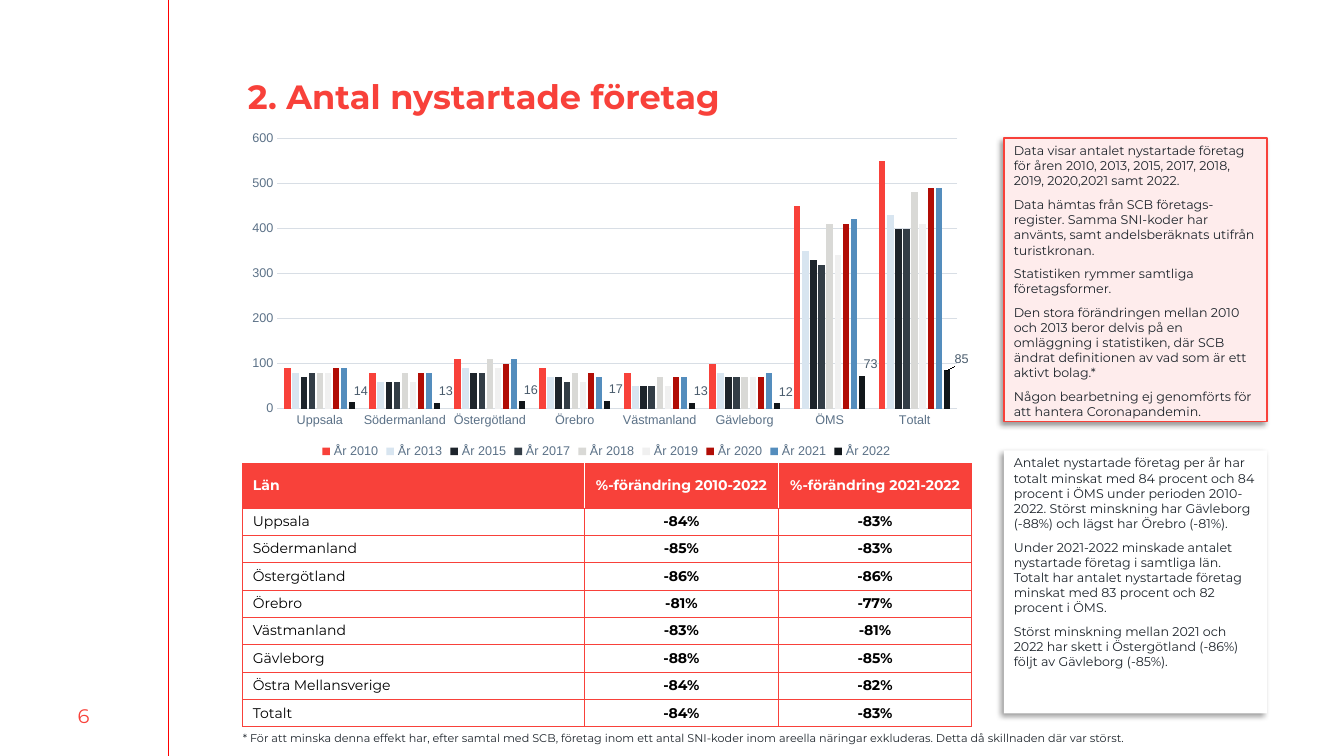
from lxml.etree import SubElement as Sub
from pptx import Presentation
from pptx.chart.data import CategoryChartData as Data
from pptx.dml.color import RGBColor as RGB
from pptx.enum.chart import XL_CHART_TYPE as Kind, XL_LABEL_POSITION as Spot
from pptx.enum.chart import XL_LEGEND_POSITION as Side, XL_TICK_MARK as Tick
from pptx.enum.shapes import MSO_CONNECTOR as Conn, MSO_SHAPE as Shape
from pptx.enum.text import MSO_ANCHOR as Anchor, PP_ALIGN as Align
from pptx.oxml import parse_xml
from pptx.oxml.ns import nsdecls, qn
from pptx.util import Cm, Pt

HUES = {
    "red": "F8413A", "rule": "FF0000", "pink": "FEECEC", "white": "FFFFFF",
    "black": "000000", "ink": "1D242B", "axis": "5B7187", "grid": "D8DEE5",
    "label": "495B6C",
}
FONT = "Montserrat"
LEFT = 6.12

AREAS = ["Uppsala", "Södermanland", "Östergötland", "Örebro", "Västmanland",
         "Gävleborg", "ÖMS", "Totalt"]
YEARS = [
    ("År 2010", "F8413A", (90, 80, 110, 90, 80, 100, 450, 550)),
    ("År 2013", "D8E5F0", (80, 60, 90, 70, 50, 80, 350, 430)),
    ("År 2015", "1D242B", (70, 60, 80, 70, 50, 70, 330, 400)),
    ("År 2017", "333D46", (80, 60, 80, 60, 50, 70, 320, 400)),
    ("År 2018", "D9D9D6", (80, 80, 110, 80, 70, 70, 410, 480)),
    ("År 2019", "F0F0F0", (80, 60, 90, 60, 50, 70, 340, 410)),
    ("År 2020", "B10D06", (90, 80, 100, 80, 70, 70, 410, 490)),
    ("År 2021", "548DBD", (90, 80, 110, 70, 70, 80, 420, 490)),
    ("År 2022", "11161A", (14, 13, 16, 17, 13, 12, 73, 85)),
]
ROWS = [
    ("Län", "%-förändring 2010-2022", "%-förändring 2021-2022"),
    ("Uppsala", "-84%", "-83%"),
    ("Södermanland", "-85%", "-83%"),
    ("Östergötland", "-86%", "-86%"),
    ("Örebro", "-81%", "-77%"),
    ("Västmanland", "-83%", "-81%"),
    ("Gävleborg", "-88%", "-85%"),
    ("Östra Mellansverige", "-84%", "-82%"),
    ("Totalt", "-84%", "-83%"),
]
FACTS = [
    "Data visar antalet nystartade företag för åren 2010, 2013, 2015, 2017, "
    "2018, 2019, 2020,2021 samt 2022.",
    "Data hämtas från SCB företags-register. Samma SNI-koder har använts, "
    "samt andelsberäknats utifrån turistkronan.",
    "Statistiken rymmer samtliga företagsformer.",
    "Den stora förändringen mellan 2010 och 2013 beror delvis på en "
    "omläggning i statistiken, där SCB ändrat definitionen av vad som är ett "
    "aktivt bolag.*",
    "Någon bearbetning ej genomförts för att hantera Coronapandemin.",
]
TRENDS = [
    "Antalet nystartade företag per år har totalt minskat med 84 procent och "
    "84 procent i ÖMS under perioden 2010-2022. Störst minskning har "
    "Gävleborg (-88%) och lägst har Örebro (-81%).",
    "Under 2021-2022 minskade antalet nystartade företag i samtliga län. "
    "Totalt har antalet nystartade företag minskat med 83 procent och 82 "
    "procent i ÖMS.",
    "Störst minskning mellan 2021 och 2022 har skett i Östergötland (-86%) "
    "följt av Gävleborg (-85%).",
]
NOTE = ("* För att minska denna effekt har, efter samtal med SCB, företag inom "
        "ett antal SNI-koder inom areella näringar exkluderas. Detta då "
        "skillnaden där var störst.")


def hue(name):
    return RGB.from_string(HUES[name])


def style(font, size, color, face=FONT, bold=False):
    font.size, font.name, font.bold = Pt(size), face, bold
    font.color.rgb = hue(color)


def write(frame, texts, size, color, bold=False, align=Align.LEFT, gap=0):
    for i, text in enumerate(texts):
        para = frame.add_paragraph() if i else frame.paragraphs[0]
        para.alignment = align
        para.space_before = Pt(gap if i else 0)
        para.space_after = Pt(gap)
        run = para.add_run()
        run.text = text
        style(run.font, size, color, bold=bold)


def add_text(slide, box, text, size, color, pad=(0.13, 0.13),
             anchor=Anchor.TOP, **look):
    frame = slide.shapes.add_textbox(*map(Cm, box)).text_frame
    frame.word_wrap = True
    frame.vertical_anchor = anchor
    frame.margin_left = frame.margin_right = Cm(pad[0])
    frame.margin_top = frame.margin_bottom = Cm(pad[1])
    write(frame, [text], size, color, **look)


def add_rule(slide, x, height):
    rule = slide.shapes.add_connector(Conn.STRAIGHT, Cm(x), 0, Cm(x), height)
    rule.line.color.rgb = hue("rule")
    rule.line.width = Pt(0.75)
    Sub(rule._element.spPr, qn("a:effectLst"))


def add_card(slide, top, height, texts, fill, edge=None):
    card = slide.shapes.add_shape(
        Shape.RECTANGLE, Cm(25.3), Cm(top), Cm(6.63), Cm(height))
    card.fill.solid()
    card.fill.fore_color.rgb = hue(fill)
    if edge:
        card.line.color.rgb = hue(edge)
        card.line.width = Pt(1)
    else:
        card.line.fill.background()
    # Soft shadow down to the left
    card.shadow.inherit = False
    glow = Sub(card._element.spPr.find(qn("a:effectLst")), qn("a:outerShdw"),
               blurRad=str(Pt(4)), dist=str(Pt(3)), dir=str(135 * 60000),
               algn="tr", rotWithShape="0")
    tone = Sub(glow, qn("a:srgbClr"), val=HUES["black"])
    Sub(tone, qn("a:alpha"), val="40000")
    frame = card.text_frame
    frame.word_wrap = True
    frame.vertical_anchor = Anchor.TOP
    write(frame, texts, 9, "ink", gap=3)


def add_edge(cell, side, color):
    line = Sub(cell._tc.get_or_add_tcPr(), qn("a:ln" + side), w=str(Pt(0.75)))
    Sub(Sub(line, qn("a:solidFill")), qn("a:srgbClr"), val=HUES[color])


def add_grid(slide):
    widths = (8.61, 4.88, 4.88)
    heights = [1.12] + [0.69] * (len(ROWS) - 1)
    table = slide.shapes.add_table(
        len(ROWS), len(widths), Cm(LEFT), Cm(11.68),
        Cm(sum(widths)), Cm(sum(heights))).table
    table.horz_banding = False
    for col, width in zip(table.columns, widths):
        col.width = Cm(width)
    for r, (row, height) in enumerate(zip(ROWS, heights)):
        table.rows[r].height = Cm(height)
        for c, text in enumerate(row):
            cell, head = table.cell(r, c), r == 0
            cell.vertical_anchor = Anchor.MIDDLE
            if c and not head:
                cell.margin_left = cell.margin_right = 0
                cell.margin_top = cell.margin_bottom = 0
            for side in "LRTB":
                inner = side == "L" and c > 0 or side == "R" and c < 2
                add_edge(cell, side, "white" if head and inner else "red")
            cell.fill.solid()
            cell.fill.fore_color.rgb = hue("red" if head else "white")
            write(cell.text_frame, [text], 10, "white" if head else "black",
                  bold=head or c > 0, align=Align.CENTER if c else Align.LEFT)


def make_layout(inner):
    return parse_xml(f'<c:layout {nsdecls("c")}><c:manualLayout>{inner}'
                     '</c:manualLayout></c:layout>')


def add_tags(bars):
    tags = bars.data_labels
    tags.show_value = True
    tags.position = Spot.OUTSIDE_END
    tags.number_format, tags.number_format_is_linked = "0", False
    style(tags.font, 9, "label", "Arial")
    # Move each label right, clear of the bar beside it
    for i in range(len(AREAS)):
        tag = bars.points[i].data_label
        style(tag.font, 9, "label", "Arial")
        tag.position = Spot.OUTSIDE_END
    for node in tags._element.findall(qn("c:dLbl")):
        last = node.idx_val == len(AREAS) - 1
        shift = 0.02 if last else 0.012
        node.insert(1, make_layout(f'<c:x val="{shift}"/><c:y val="0"/>'))


def add_bars(slide):
    data = Data(number_format="0")
    data.categories = AREAS
    for name, _, vals in YEARS:
        data.add_series(name, vals)
    chart = slide.shapes.add_chart(
        Kind.COLUMN_CLUSTERED, Cm(6.07), Cm(3.15), Cm(18.42), Cm(8.51),
        data).chart
    style(chart.font, 10, "ink", "Arial")
    chart.has_title = False
    chart.has_legend = True
    chart.legend.position = Side.BOTTOM
    chart.legend.include_in_layout = False
    style(chart.legend.font, 9, "axis", "Arial")

    # Axes
    cats, vals = chart.category_axis, chart.value_axis
    for axis in (cats, vals):
        axis.major_tick_mark = axis.minor_tick_mark = Tick.NONE
        style(axis.tick_labels.font, 9, "axis", "Arial")
    vals.minimum_scale, vals.maximum_scale, vals.major_unit = 0, 600, 100
    vals.format.line.fill.background()
    for line in (cats.format.line, vals.major_gridlines.format.line):
        line.color.rgb = hue("grid")
        line.width = Pt(0.75)

    # Bars
    plot = chart.plots[0]
    plot.gap_width, plot.overlap = 219, -27
    plot.vary_by_categories = False
    for bars, (_, color, _) in zip(plot.series, YEARS):
        bars.format.fill.solid()
        bars.format.fill.fore_color.rgb = RGB.from_string(color)
    add_tags(plot.series[-1])

    # Plot area
    area = chart._chartSpace.chart.plotArea
    for old in area.findall(qn("c:layout")):
        area.remove(old)
    area.insert(0, make_layout(
        '<c:layoutTarget val="inner"/>'
        '<c:xMode val="edge"/><c:yMode val="edge"/>'
        '<c:x val="0.05"/><c:y val="0.04"/>'
        '<c:w val="0.93"/><c:h val="0.8"/>'))


def main():
    deck = Presentation()
    deck.slide_width, deck.slide_height = Cm(33.87), Cm(19.05)
    slide = deck.slides.add_slide(deck.slide_layouts[6])
    # Margin and heading
    add_text(slide, (0, 17.53, 4.22, 1.02), "6", 14, "red",
             anchor=Anchor.MIDDLE, align=Align.CENTER)
    add_rule(slide, 4.24, deck.slide_height)
    add_text(slide, (LEFT, 1.78, 26.09, 2.26), "2. Antal nystartade företag",
             24, "red", bold=True)
    # Comments, figures and footnote
    add_card(slide, 3.48, 7.14, FACTS, "pink", "red")
    add_grid(slide)
    add_card(slide, 11.35, 6.63, TRENDS, "white")
    add_text(slide, (LEFT, 18.29, 26.09, 0.48), NOTE, 8, "ink", (0, 0.13))
    add_bars(slide)
    deck.save("out.pptx")


if __name__ == "__main__":
    main()
